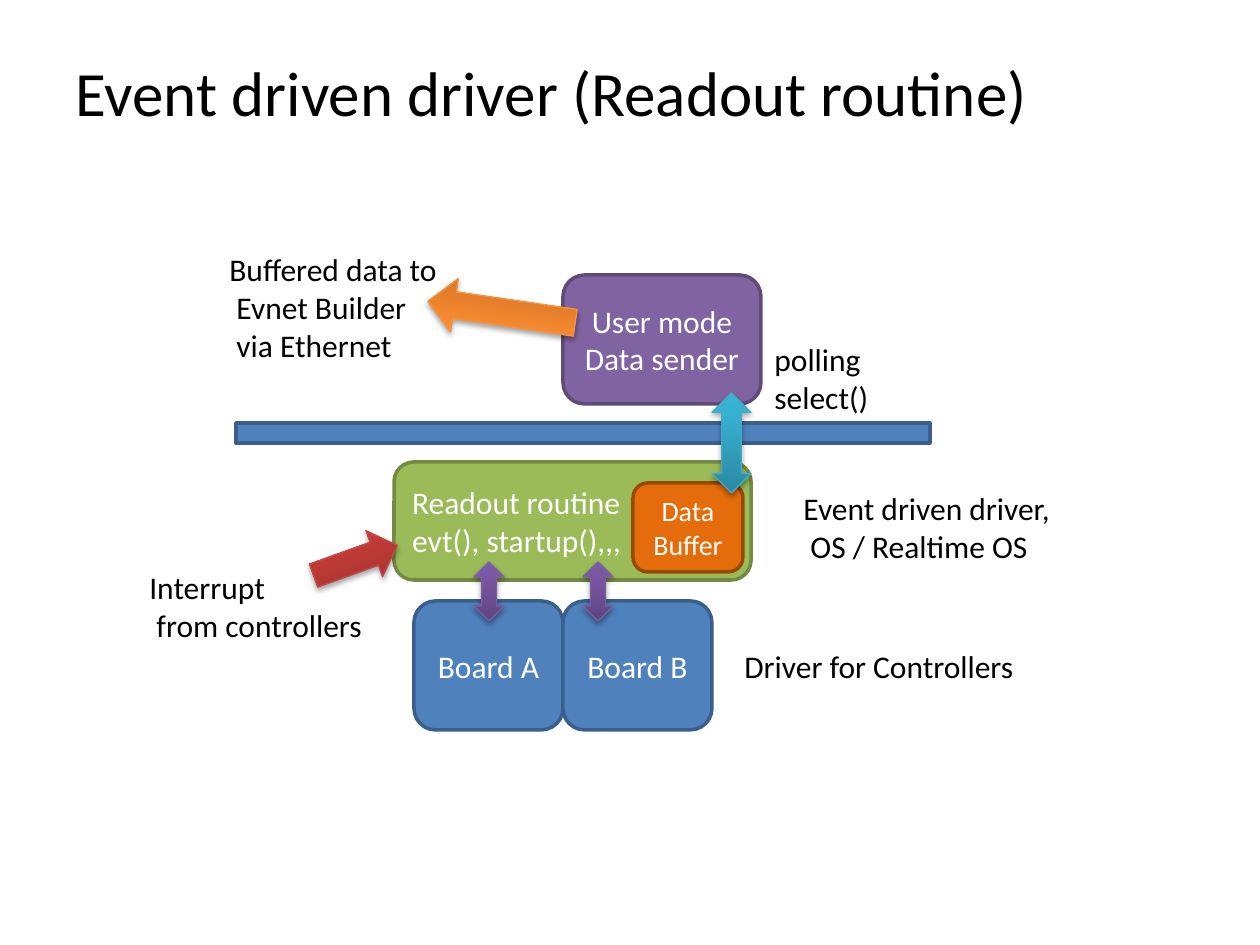
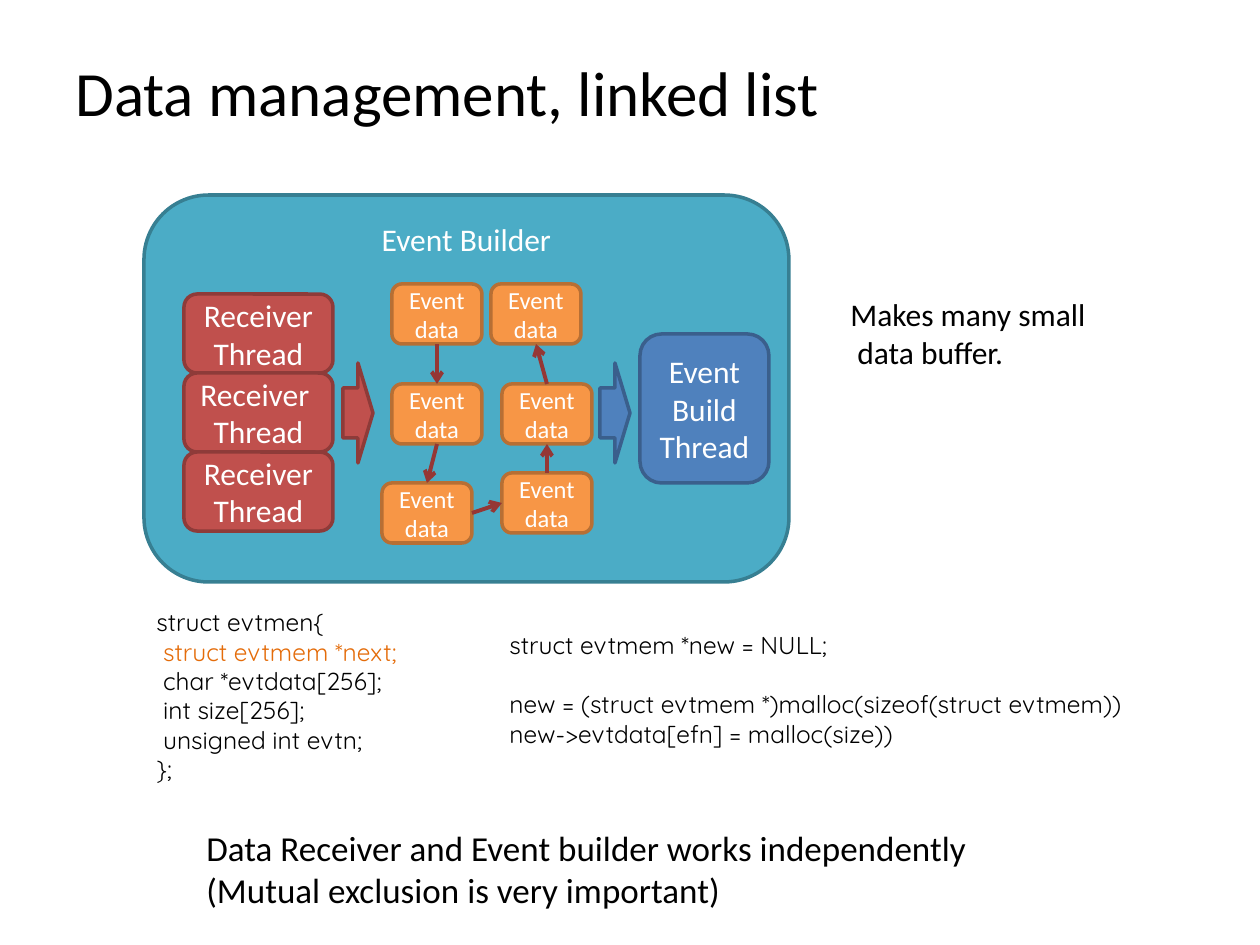
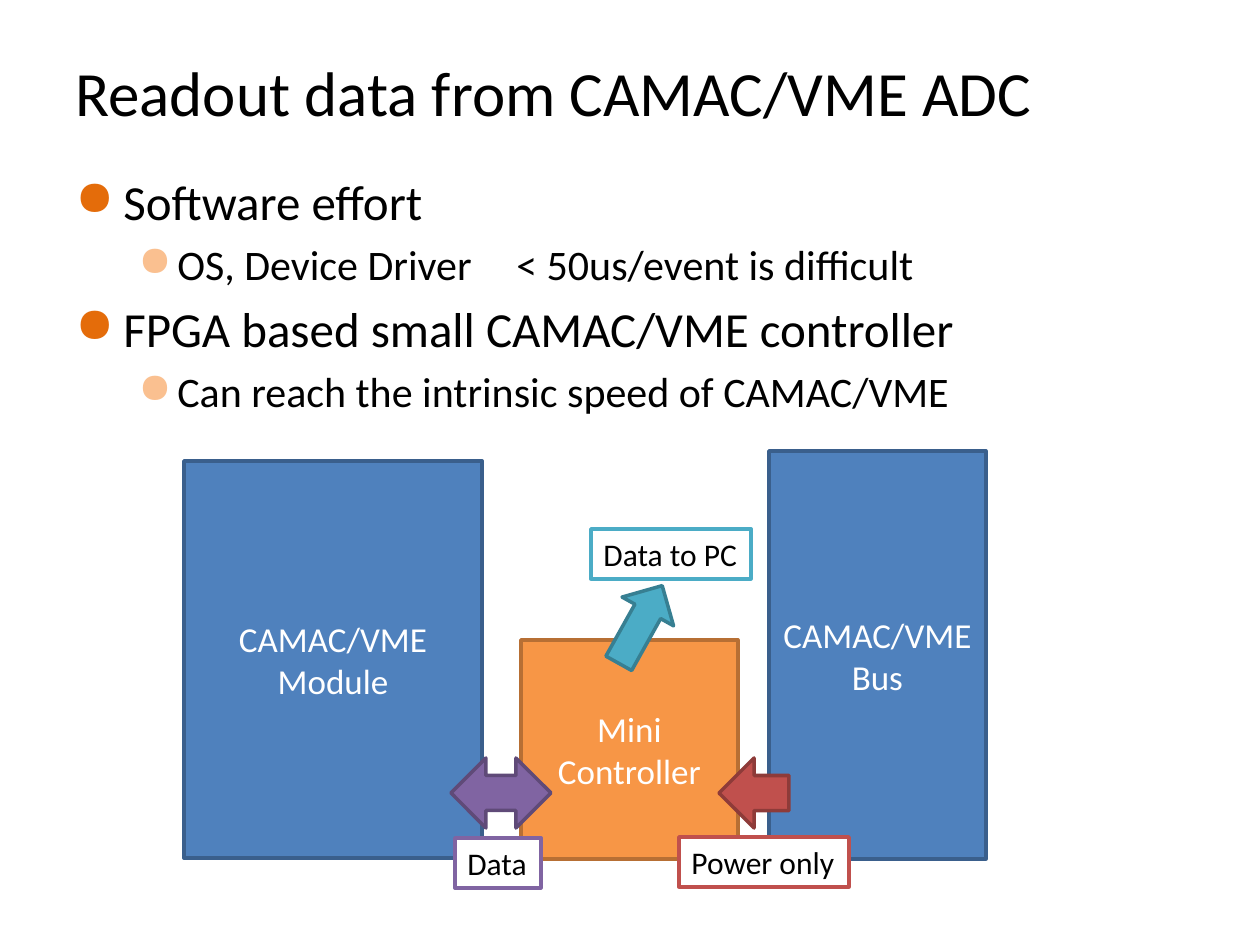
from copy import deepcopy
from dataclasses import dataclass
from itertools import pairwise

from lxml import etree
from pptx import Presentation
from pptx import util as u
from pptx.dml.color import RGBColor
from pptx.enum import shapes, text
from pptx.oxml import ns

PX = 914400 / 126
FONT, CODE_FONT = "Calibri", "Quicksand"
KIND = shapes.MSO_SHAPE
LEFT, CENTER = text.PP_ALIGN.LEFT, text.PP_ALIGN.CENTER
TOP, MIDDLE = text.MSO_ANCHOR.TOP, text.MSO_ANCHOR.MIDDLE

BLACK = RGBColor(0x00, 0x00, 0x00)
WHITE = RGBColor(0xFF, 0xFF, 0xFF)
DARK_RED = RGBColor(0x95, 0x37, 0x35)
DEEP_ORANGE = RGBColor(0xE4, 0x6C, 0x0A)
PALE_ORANGE = RGBColor(0xFA, 0xC0, 0x90)

# Fill and outline of flat shapes
BLUE = RGBColor(0x4F, 0x81, 0xBD), RGBColor(0x3A, 0x5F, 0x8C)
GREEN = RGBColor(0x9B, 0xBB, 0x59), RGBColor(0x73, 0x8A, 0x42)
PURPLE = RGBColor(0x80, 0x64, 0xA2), RGBColor(0x5F, 0x4A, 0x78)
TEAL = RGBColor(0x4B, 0xAC, 0xC6), RGBColor(0x37, 0x7F, 0x92)
RED = RGBColor(0xC0, 0x50, 0x4D), RGBColor(0x8E, 0x3B, 0x39)
ORANGE = RGBColor(0xF7, 0x96, 0x46), RGBColor(0xB7, 0x6F, 0x34)
BUFFER = DEEP_ORANGE, RGBColor(0x98, 0x48, 0x07)

# Three gradient stops and the outline of glossy arrows
GLOSSY_RED = (RGBColor(0x9C, 0x2F, 0x2D), RGBColor(0xCB, 0x3E, 0x3A),
              RGBColor(0xCE, 0x3B, 0x37), RGBColor(0xBF, 0x4C, 0x48))
GLOSSY_TEAL = (RGBColor(0x2A, 0x88, 0xA2), RGBColor(0x37, 0xB1, 0xD2),
               RGBColor(0x34, 0xB4, 0xD6), RGBColor(0x46, 0xAA, 0xC5))
GLOSSY_ORANGE = (RGBColor(0xCC, 0x6E, 0x20), RGBColor(0xFF, 0x90, 0x34),
                 RGBColor(0xFF, 0x91, 0x36), RGBColor(0xF6, 0x92, 0x40))
GLOSSY_PURPLE = (RGBColor(0x5F, 0x44, 0x80), RGBColor(0x7B, 0x58, 0xA6),
                 RGBColor(0x7C, 0x57, 0xA8), RGBColor(0x7D, 0x60, 0xA0))


@dataclass
class Box:
    left: int
    top: int
    width: int
    height: int

    def inner(self, x, y, width, height):
        return Box(self.left + x, self.top + y, width, height)

    def emu(self):
        return [round(side * PX) for side in (self.left, self.top, self.width, self.height)]


def add_xml(parent, tag, **attributes):
    return etree.SubElement(parent, ns.qn(tag), attributes)


def write(frame, lines, size, color, font=FONT, align=LEFT, anchor=TOP):
    """Fill the frame; a line is a string or a list of (string, colour) runs."""
    frame.vertical_anchor = anchor
    for number, line in enumerate(lines):
        para = frame.add_paragraph() if number else frame.paragraphs[0]
        para.alignment = align
        for words, tint in [(line, color)] if isinstance(line, str) else line:
            span = para.add_run()
            span.text = words
            span.font.name = font
            span.font.size = u.Pt(size)
            span.font.color.rgb = tint


def draw(page, kind, box, colors, lines=(), size=18, align=CENTER, anchor=MIDDLE, rotation=0):
    shape = page.shapes.add_shape(kind, *box.emu())
    shape.shadow.inherit = False
    shape.rotation = rotation
    shape.fill.solid()
    shape.fill.fore_color.rgb, shape.line.color.rgb = colors
    shape.line.width = u.Pt(2)
    write(shape.text_frame, lines, size, WHITE, align=align, anchor=anchor)
    return shape


def draw_glossy(page, kind, box, colors, rotation=0):
    """Draw an arrow with a vertical gradient and a soft shadow."""
    *stops, outline = colors
    shape = draw(page, kind, box, (stops[0], outline), rotation=rotation)
    shape.line.width = u.Pt(0.75)
    shape.fill.gradient()
    shape.fill.gradient_angle = 90
    stop_list = shape.element.spPr.find(".//" + ns.qn("a:gsLst"))
    stop_list.append(deepcopy(stop_list[-1]))
    for stop, color, position in zip(shape.fill.gradient_stops, stops, (0, 0.8, 1)):
        stop.color.rgb = color
        stop.position = position
    effects = shape.element.spPr.find(ns.qn("a:effectLst"))
    shadow = add_xml(effects, "a:outerShdw", blurRad="40000", dist="23000",
                     dir="5400000", rotWithShape="0")
    add_xml(add_xml(shadow, "a:srgbClr", val="000000"), "a:alpha", val="35000")


def label(page, box, lines, size=18, font=FONT, wrap=False):
    area = page.shapes.add_textbox(*box.emu())
    area.text_frame.word_wrap = wrap
    area.text_frame.auto_size = text.MSO_AUTO_SIZE.SHAPE_TO_FIT_TEXT
    write(area.text_frame, lines, size, BLACK, font)
    return area


def framed_label(page, box, words, outline):
    area = label(page, box, [words])
    area.fill.solid()
    area.fill.fore_color.rgb = WHITE
    area.line.color.rgb = outline
    area.line.width = u.Pt(2)


def link(page, start, start_site, end, end_site):
    line = page.shapes.add_connector(shapes.MSO_CONNECTOR.STRAIGHT, 0, 0, 0, 0)
    line.begin_connect(start, start_site)
    line.end_connect(end, end_site)
    line.line.color.rgb = DARK_RED
    line.line.width = u.Pt(2.25)
    add_xml(line.line._get_or_add_ln(), "a:tailEnd", type="arrow")
    add_xml(line.element.spPr, "a:effectLst")


def new_page(deck, title):
    page = deck.slides.add_slide(deck.slide_layouts[6])
    area = page.shapes.add_textbox(*Box(63, 38, 1134, 107).emu())
    area.text_frame.word_wrap = True
    write(area.text_frame, [title], 36, BLACK, anchor=MIDDLE)
    return page


def kernel_side(page, box):
    draw(page, KIND.ROUNDED_RECTANGLE, box.inner(257, 0, 357, 118), GREEN,
         ["Readout routine", "evt(), startup(),,,"], align=LEFT)
    draw_glossy(page, KIND.RIGHT_ARROW, box.inner(174, 74, 89, 49), GLOSSY_RED, 340.2)
    label(page, box.inner(0, 100, 241, 89), ["Interrupt", " from controllers"])
    draw(page, KIND.ROUNDED_RECTANGLE, box.inner(496, 21, 110, 89), BUFFER,
         ["Data", "Buffer"], size=16)
    label(page, box.inner(654, 21, 275, 89), ["Event driven driver,", " OS / Realtime OS"])


def controllers(page, box):
    for number, name in enumerate(["Board A", "Board B"]):
        draw(page, KIND.ROUNDED_RECTANGLE, box.inner(149 * number, 39, 149, 129), BLUE, [name])
        draw_glossy(page, KIND.UP_DOWN_ARROW, box.inner(60 + 109 * number, 0, 30, 59),
                    GLOSSY_PURPLE)
    label(page, box.inner(318, 79, 297, 50), ["Driver for Controllers"])


def user_side(page, box):
    draw(page, KIND.RECTANGLE, box.inner(19, 179, 694, 20), BLUE)
    draw(page, KIND.ROUNDED_RECTANGLE, box.inner(346, 31, 198, 129), PURPLE,
         ["User mode", "Data sender"])
    draw_glossy(page, KIND.UP_DOWN_ARROW, box.inner(495, 149, 39, 100), GLOSSY_TEAL)
    label(page, box.inner(545, 90, 121, 89), ["polling", "select()"])
    draw_glossy(page, KIND.RIGHT_ARROW, box.inner(210, 41, 149, 54), GLOSSY_ORANGE, 188.3)
    label(page, box.inner(0, 0, 243, 127),
          ["Buffered data to", " Evnet Builder", " via Ethernet"])


def driver_page(deck):
    page = new_page(deck, "Event driven driver (Readout routine)")
    kernel_side(page, Box(137, 462, 929, 189))
    controllers(page, Box(414, 562, 615, 168))
    user_side(page, Box(217, 244, 713, 249))


def event_list(page, box):
    """Draw the chain of event buffers, linked from first to last."""
    top, right, bottom, left = 0, 3, 2, 1
    spots = [(10, 0), (10, 100), (0, 199), (120, 189), (120, 100), (109, 0)]
    sites = [(bottom, top), (bottom, top), (right, left), (top, bottom), (top, bottom)]
    nodes = [draw(page, KIND.ROUNDED_RECTANGLE, box.inner(x, y, 90, 60), ORANGE,
                  ["Event data"], size=14) for x, y in spots]
    for (start, end), (start_site, end_site) in zip(pairwise(nodes), sites):
        link(page, start, start_site, end, end_site)


def event_builder(page, box):
    draw(page, KIND.ROUNDED_RECTANGLE, box, TEAL, ["Event Builder"], anchor=TOP)
    for row in range(3):
        draw(page, KIND.ROUNDED_RECTANGLE, box.inner(40, 99 + 79 * row, 149, 79), RED,
             ["Receiver " if row == 1 else "Receiver", "Thread"])
    draw(page, KIND.ROUNDED_RECTANGLE, box.inner(496, 139, 129, 149), BLUE,
         ["Event", "Build", "Thread"])
    event_list(page, box.inner(238, 89, 210, 259))
    for x, colors in [(199, RED), (456, BLUE)]:
        draw(page, KIND.RIGHT_ARROW, box.inner(x, 168, 30, 100), colors)


def code_samples(page, box):
    label(page, box.inner(0, 0, 348, 190),
          ["struct evtmen{", [(" ", BLACK), ("struct evtmem *next;", DEEP_ORANGE)],
           " char *evtdata[256];", " int size[256];", " unsigned int evtn;", "};"],
          14, CODE_FONT, wrap=True)
    allocation = label(page, box.inner(353, 23, 669, 131),
                       ["struct evtmem *new = NULL;",
                        "new = (struct evtmem *)malloc(sizeof(struct evtmem))",
                        "new->evtdata[efn] = malloc(size))"], 14, CODE_FONT)
    allocation.text_frame.paragraphs[1].space_before = u.Pt(17)


def list_page(deck):
    page = new_page(deck, "Data management, linked list")
    event_builder(page, Box(144, 195, 645, 387))
    code_samples(page, Box(144, 601, 1022, 190))
    label(page, Box(838, 289, 263, 89), ["Makes many small", " data buffer."])
    label(page, Box(194, 820, 793, 97),
          ["Data Receiver and Event builder works independently",
           "(Mutual exclusion is very important)"], 20)


def bullets(page, box, items):
    """Write (level, string) items as a two-level list."""
    levels = [(28, 48, 48, DEEP_ORANGE), (24, 102, 39, PALE_ORANGE)]
    frame = page.shapes.add_textbox(*box.emu()).text_frame
    frame.word_wrap = True
    write(frame, [words for _, words in items], 28, BLACK)
    for para, (level, _) in zip(frame.paragraphs, items):
        size, margin, hanging, color = levels[level]
        para.level = level
        para.runs[0].font.size = u.Pt(size)
        props = para._p.get_or_add_pPr()
        props.set("marL", str(round(margin * PX)))
        props.set("indent", str(round(-hanging * PX)))
        add_xml(add_xml(props, "a:spcBef"), "a:spcPct", val="20000")
        add_xml(add_xml(props, "a:buClr"), "a:srgbClr", val=str(color))
        add_xml(props, "a:buChar", char="●")


def controller_diagram(page, box):
    draw(page, KIND.RECTANGLE, box.inner(0, 10, 298, 397), BLUE,
         ["CAMAC/VME", "Module"], size=20)
    draw(page, KIND.RECTANGLE, box.inner(337, 189, 217, 219), ORANGE,
         ["Mini", "Controller"], size=20)
    draw(page, KIND.RECTANGLE, box.inner(585, 0, 217, 408), BLUE,
         ["CAMAC/VME", "Bus"], size=20)
    draw(page, KIND.RIGHT_ARROW, box.inner(535, 307, 70, 70), RED, rotation=180)
    framed_label(page, box.inner(495, 386, 170, 50), "Power only", RED[0])
    draw(page, KIND.LEFT_RIGHT_ARROW, box.inner(267, 307, 100, 70), PURPLE)
    framed_label(page, box.inner(271, 387, 86, 50), "Data", PURPLE[0])
    draw(page, KIND.RIGHT_ARROW, box.inner(412, 144, 89, 59), TEAL, rotation=299.2)
    framed_label(page, box.inner(407, 78, 160, 50), "Data to PC", TEAL[0])


def readout_page(deck):
    page = new_page(deck, "Readout data from CAMAC/VME ADC")
    bullets(page, Box(63, 165, 1134, 679),
            [(0, "Software effort"),
             (1, "OS, Device Driver \t< 50us/event is difficult"),
             (0, "FPGA based small CAMAC/VME controller"),
             (1, "Can reach the intrinsic speed of CAMAC/VME")])
    controller_diagram(page, Box(184, 451, 802, 437))


def main():
    deck = Presentation()
    deck.slide_width, deck.slide_height = u.Inches(10), u.Inches(7.5)
    driver_page(deck)
    list_page(deck)
    readout_page(deck)
    deck.save("out.pptx")


if __name__ == "__main__":
    main()
